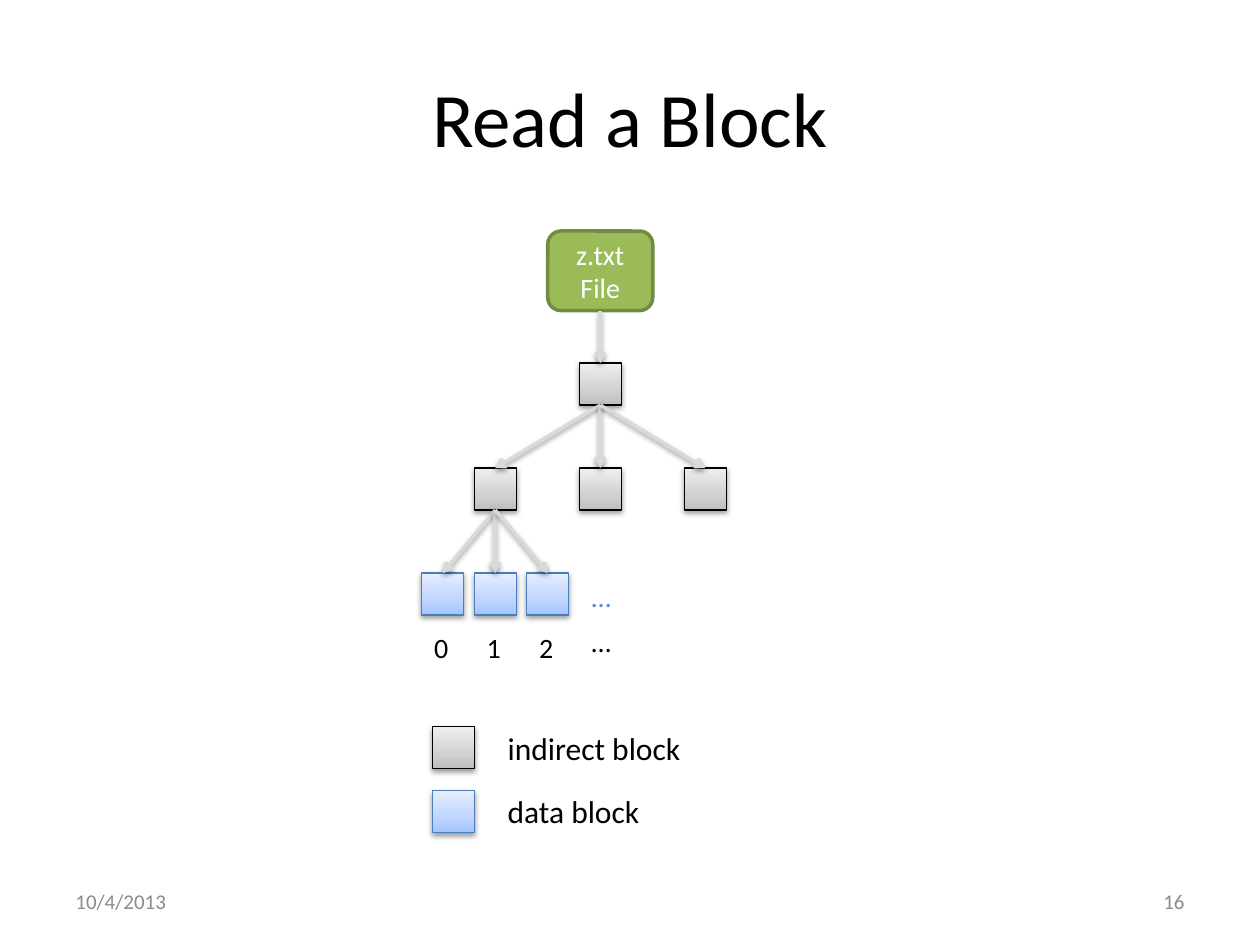
from dataclasses import dataclass
from copy import deepcopy

from lxml import etree
from pptx import Presentation
from pptx.dml.color import RGBColor
from pptx.enum.shapes import MSO_CONNECTOR, MSO_SHAPE
from pptx.enum.text import MSO_ANCHOR, MSO_AUTO_SIZE, PP_ALIGN
from pptx.oxml.ns import qn
from pptx.util import Pt

RECT, ROUNDED = MSO_SHAPE.RECTANGLE, MSO_SHAPE.ROUNDED_RECTANGLE
STRAIGHT = MSO_CONNECTOR.STRAIGHT
LEFT, CENTER, RIGHT = PP_ALIGN.LEFT, PP_ALIGN.CENTER, PP_ALIGN.RIGHT
TOP, MIDDLE = MSO_ANCHOR.TOP, MSO_ANCHOR.MIDDLE
GROW, FIXED = MSO_AUTO_SIZE.SHAPE_TO_FIT_TEXT, MSO_AUTO_SIZE.NONE
BOTTOM_SITE, TOP_SITE = 2, 0


@dataclass(frozen=True)
class Theme:
    font: str = "Calibri"
    title_size: int = 44
    legend_size: int = 18
    label_size: int = 16
    footer_size: int = 12
    ink: str = "000000"
    footer: str = "8C8C8C"
    more_data: str = "558ED5"
    white: str = "FFFFFF"
    file_fill: str = "9BBB59"
    file_line: str = "738A42"
    arrow: str = "D9D9D9"
    indirect: tuple = ("000000", "BDBDBD", "D1D1D1", "EEEEEE")
    data: tuple = ("4B7EBC", "A4C4FF", "BFD4FF", "E6EEFF")


def assign(target, values):
    for name, value in values.items():
        setattr(target, name, value)


def rgb(color):
    return RGBColor.from_string(color)


class Diagram:
    BLOCK = 24

    def __init__(self, slide, theme):
        self.slide = slide
        self.theme = theme

    def fill_text(self, frame, wording, size, color, align, anchor, auto_size):
        assign(frame, {"text": wording, "word_wrap": True,
                       "vertical_anchor": anchor, "auto_size": auto_size})
        for paragraph in frame.paragraphs:
            paragraph.alignment = align
            assign(paragraph.font, {"name": self.theme.font, "size": Pt(size)})
            paragraph.font.color.rgb = rgb(color)

    def text(self, box, wording, size, color, align=LEFT, anchor=TOP, auto_size=GROW):
        area = self.slide.shapes.add_textbox(*map(Pt, box))
        self.fill_text(area.text_frame, wording, size, color, align, anchor, auto_size)

    def shape(self, kind, box, outline, width):
        shape = self.slide.shapes.add_shape(kind, *map(Pt, box))
        shape.shadow.inherit = False
        shape.line.color.rgb = rgb(outline)
        shape.line.width = Pt(width)
        return shape

    def shade(self, effects):
        shadow = etree.SubElement(effects, qn("a:outerShdw"), blurRad=str(Pt(3.1)),
                                  dist=str(Pt(1.6)), dir="5400000", rotWithShape="0")
        color = etree.SubElement(shadow, qn("a:srgbClr"), val=self.theme.ink)
        etree.SubElement(color, qn("a:alpha"), val="38000")

    def file(self, box, wording):
        theme = self.theme
        node = self.shape(ROUNDED, box, theme.file_line, 2)
        node.fill.solid()
        node.fill.fore_color.rgb = rgb(theme.file_fill)
        self.fill_text(node.text_frame, wording, theme.label_size, theme.white,
                       CENTER, MIDDLE, FIXED)
        return node

    def block(self, center, top, palette):
        outline, *tones = palette
        box = (center - self.BLOCK / 2, top, self.BLOCK, self.BLOCK)
        block = self.shape(RECT, box, outline, 0.75)
        block.fill.gradient()
        block.fill.gradient_angle = 90
        properties = block.element.spPr
        stop_list = properties.find(qn("a:gradFill")).find(qn("a:gsLst"))
        stop_list.insert(1, deepcopy(stop_list[0]))
        stop_list[1].set("pos", "35000")
        for stop, tone in zip(block.fill.gradient_stops, tones):
            stop.color.rgb = rgb(tone)
        self.shade(properties.find(qn("a:effectLst")))
        return block

    def arrow(self, parent, child):
        link = self.slide.shapes.add_connector(STRAIGHT, 0, 0, 0, 0)
        link.begin_connect(parent, BOTTOM_SITE)
        link.end_connect(child, TOP_SITE)
        link.line.color.rgb = rgb(self.theme.arrow)
        link.line.width = Pt(2)
        properties = link.element.spPr
        etree.SubElement(properties.find(qn("a:ln")), qn("a:tailEnd"), type="arrow")
        self.shade(etree.SubElement(properties, qn("a:effectLst")))


def main():
    deck = Presentation()
    assign(deck, {"slide_width": Pt(720), "slide_height": Pt(540)})
    theme = Theme()
    diagram = Diagram(deck.slides.add_slide(deck.slide_layouts[6]), theme)

    diagram.text((36, 21.6, 648, 90), "Read a Block", theme.title_size, theme.ink,
                 CENTER, MIDDLE, FIXED)
    for left, wording, align in ((36, "10/4/2013", LEFT), (516, "16", RIGHT)):
        diagram.text((left, 500.5, 168, 28.75), wording, theme.footer_size,
                     theme.footer, align, MIDDLE, FIXED)

    axis, root_top, level_step = 343, 207.5, 60
    branch_step, data_step = 60, 30
    data_top = root_top + 2 * level_step

    file_node = diagram.file((axis - 30, 132, 60, 45.5), "z.txt\nFile")
    root = diagram.block(axis, root_top, theme.indirect)
    branches = [diagram.block(axis + i * branch_step, root_top + level_step, theme.indirect)
                for i in (-1, 0, 1)]
    data_centers = [axis - branch_step + i * data_step for i in (-1, 0, 1, 2)]
    *block_centers, more_center = data_centers
    data_blocks = [diagram.block(center, data_top, theme.data) for center in block_centers]

    diagram.arrow(file_node, root)
    for parent, children in ((root, branches), (branches[0], data_blocks)):
        for child in children:
            diagram.arrow(parent, child)

    labels = [(center, 357, str(i), theme.ink) for i, center in enumerate(block_centers)]
    labels += [(more_center, 353.5, "…", theme.ink),
               (more_center, data_top, "…", theme.more_data)]
    for center, top, wording, color in labels:
        diagram.text((center - 12, top, 24, 26.6), wording, theme.label_size, color)

    legend = (("indirect block", theme.indirect), ("data block", theme.data))
    for row, (wording, palette) in enumerate(legend):
        top = 415.3 + row * 36.5
        diagram.block(259, top, palette)
        diagram.text((283, top - 2.5, 138, 29), wording, theme.legend_size, theme.ink)

    deck.save("out.pptx")


if __name__ == "__main__":
    main()
